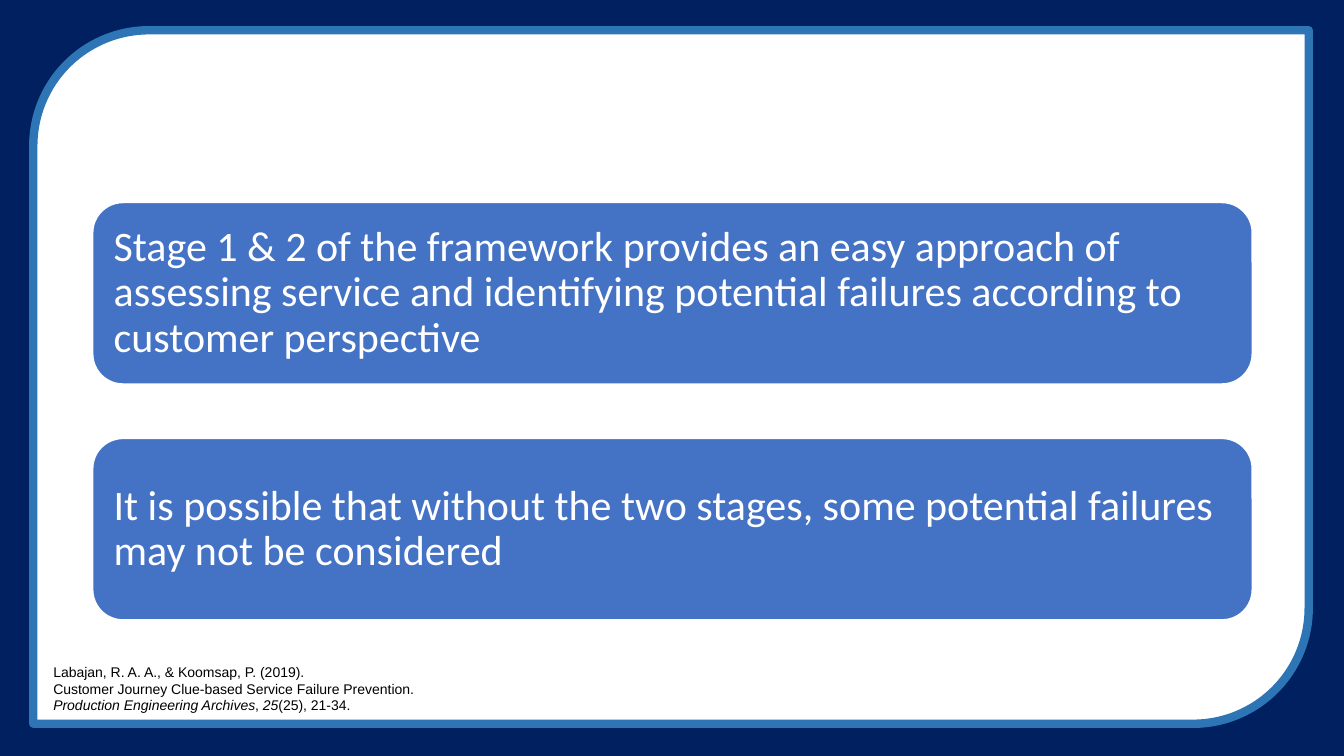
from pptx import Presentation
from pptx import util as u
from pptx.dml.color import RGBColor
from pptx.enum import shapes, text

COLORS = {"navy": "002060", "white": "FFFFFF", "border": "2E75B6",
          "card": "4472C4", "black": "000000"}
WIDTH, HEIGHT = 13.33, 7.5
CARD_LEFT, CARD_TOP, CARD_WIDTH, CARD_HEIGHT, CARD_STEP = 0.92, 2.01, 11.5, 1.8, 2.34

deck = Presentation()
deck.slide_width, deck.slide_height = u.Inches(WIDTH), u.Inches(HEIGHT)
page = deck.slides.add_slide(deck.slide_layouts[6])


def add_panel(kind, left, top, width, height, fill, line=None, weight=1):
    panel = page.shapes.add_shape(kind, *map(u.Inches, (left, top, width, height)))
    panel.shadow.inherit = False
    panel.fill.solid()
    panel.fill.fore_color.rgb = RGBColor.from_string(COLORS[fill])
    if line:
        panel.line.color.rgb = RGBColor.from_string(COLORS[line])
        panel.line.width = u.Pt(weight)
    else:
        panel.line.fill.background()
    return panel


def add_span(para, words, font, size, color, italic=False):
    span = para.add_run()
    span.text = words
    span.font.name = font
    span.font.size = u.Pt(size)
    span.font.italic = italic
    span.font.color.rgb = RGBColor.from_string(COLORS[color])


add_panel(shapes.MSO_SHAPE.RECTANGLE, 0, 0, WIDTH, HEIGHT, "navy")
frame = add_panel(shapes.MSO_SHAPE.ROUND_2_DIAG_RECTANGLE,
                  0.33, 0.3, 12.65, 6.88, "white", "border", 6)
frame.rotation = 180

findings = [
    "Stage 1 & 2 of the framework provides an easy approach of assessing service "
    "and identifying potential failures according to customer perspective",
    "It is possible that without the two stages, some potential failures "
    "may not be considered",
]
for row, finding in enumerate(findings):
    card = add_panel(shapes.MSO_SHAPE.ROUNDED_RECTANGLE, CARD_LEFT,
                     CARD_TOP + row * CARD_STEP, CARD_WIDTH, CARD_HEIGHT, "card", "white")
    body = card.text_frame
    body.word_wrap = True
    body.vertical_anchor = text.MSO_ANCHOR.MIDDLE
    body.margin_left = body.margin_right = u.Inches(0.12)
    body.margin_top = body.margin_bottom = u.Inches(0.12)
    para = body.paragraphs[0]
    para.alignment = text.PP_ALIGN.LEFT
    para.line_spacing = 0.9
    add_span(para, finding, "Calibri", 30, "white")

citation = [
    [("Labajan, R. A. A., & Koomsap, P. (2019).", False)],
    [("Customer Journey Clue-based Service Failure Prevention.", False)],
    [("Production Engineering Archives", True), (", ", False),
     ("25", True), ("(25), 21-34.", False)],
]
box = page.shapes.add_textbox(*map(u.Inches, (0.43, 6.53, 3.85, 0.61)))
box.text_frame.word_wrap = True
box.text_frame.auto_size = text.MSO_AUTO_SIZE.SHAPE_TO_FIT_TEXT
for row, spans in enumerate(citation):
    para = box.text_frame.add_paragraph() if row else box.text_frame.paragraphs[0]
    for words, italic in spans:
        add_span(para, words, "Arial", 10, "black", italic)

deck.save("out.pptx")
